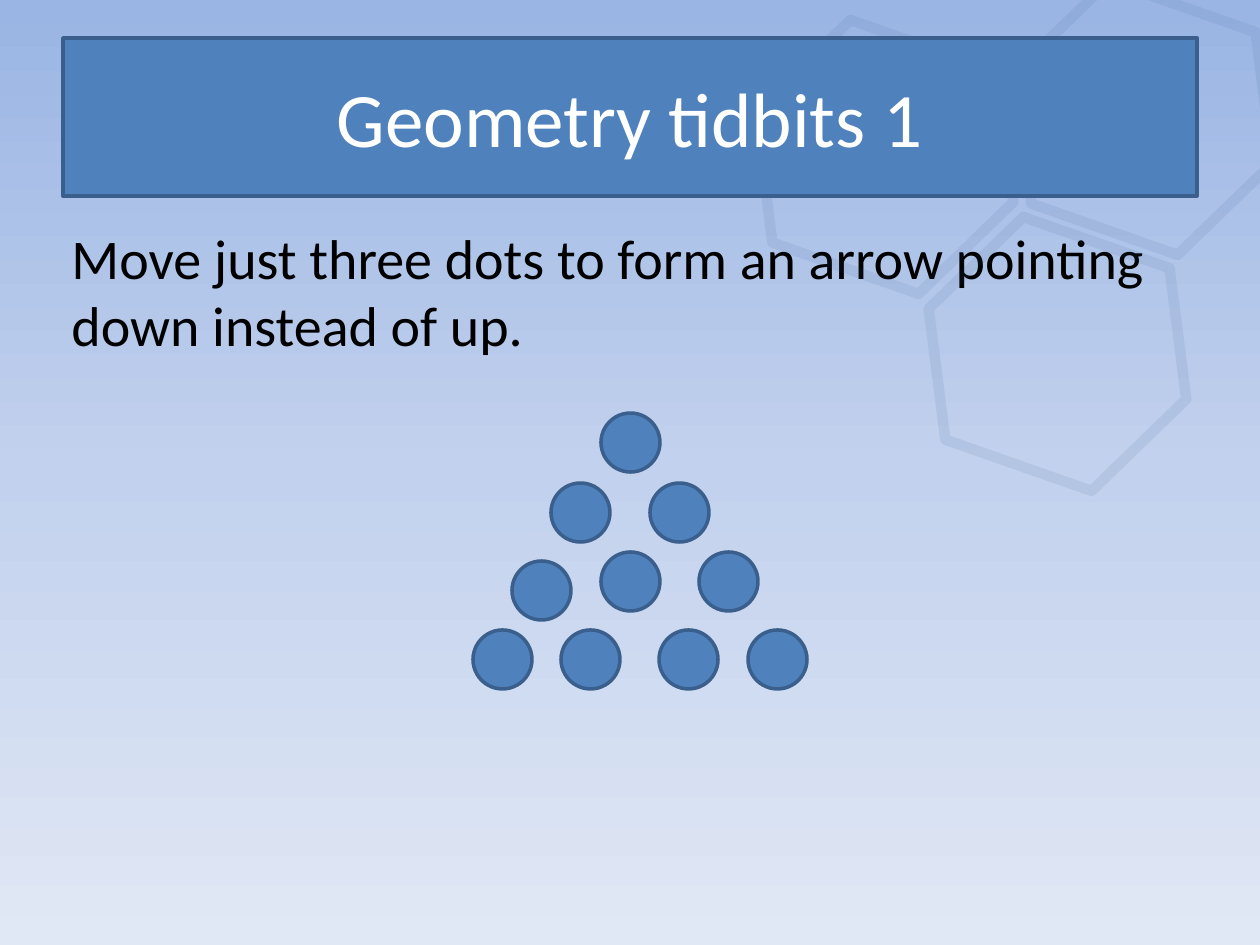
from copy import deepcopy

from lxml import etree
from pptx import Presentation
from pptx.dml.color import RGBColor
from pptx.enum.shapes import MSO_SHAPE
from pptx.enum.text import MSO_ANCHOR, PP_ALIGN
from pptx.oxml.ns import qn
from pptx.util import Pt

RECTANGLE, OVAL, HEXAGON = MSO_SHAPE.RECTANGLE, MSO_SHAPE.OVAL, MSO_SHAPE.HEXAGON
MIDDLE, TOP = MSO_ANCHOR.MIDDLE, MSO_ANCHOR.TOP
CENTER, LEFT = PP_ALIGN.CENTER, PP_ALIGN.LEFT

EMU_PER_INCH = 914400
PX_PER_INCH = 126
COLORS = {"blue": "4F81BD", "outline": "3A5F8C", "white": "FFFFFF", "black": "000000"}
SKY = [(0, "9AB5E4"), (0.5, "C2D1ED"), (1, "E1E8F5")]
HEXAGON_CORNERS = [(748, 39), (921, 236), (1007, 0)]
DOT_SIZE = 59
DOT_ROWS = [
    [(601, 413)],
    [(551, 483), (650, 483)],
    [(512, 561), (601, 552), (699, 552)],
    [(473, 630), (561, 630), (659, 630), (748, 630)],
]


def px(length):
    return round(length * EMU_PER_INCH / PX_PER_INCH)


def rgb(name):
    return RGBColor.from_string(COLORS[name])


def apply(target, values):
    for attribute, value in values.items():
        setattr(target, attribute, value)


def paint_background(slide):
    fill = slide.background.fill
    fill.gradient()
    fill.gradient_angle = 270
    stop_list = slide.element.find(".//" + qn("a:gsLst"))
    stop_list.append(deepcopy(stop_list[0]))
    for stop, (position, color) in zip(fill.gradient_stops, SKY):
        stop.position = position
        stop.color.rgb = RGBColor.from_string(color)


def add_outlined(slide, kind, box, line_width):
    shape = slide.shapes.add_shape(kind, *map(px, box))
    shape.shadow.inherit = False
    shape.line.color.rgb = rgb("outline")
    shape.line.width = Pt(line_width)
    return shape


def add_filled(slide, kind, box):
    shape = add_outlined(slide, kind, box, 2)
    shape.fill.solid()
    shape.fill.fore_color.rgb = rgb("blue")
    return shape


def add_faint_hexagon(slide, left, top):
    hexagon = add_outlined(slide, HEXAGON, (left, top, 273, 236), 6)
    hexagon.rotation = 19.3
    hexagon.fill.background()
    line_color = hexagon.line._ln.find(".//" + qn("a:srgbClr"))
    etree.SubElement(line_color, qn("a:alpha"), val="10000")


def write(shape, text, size, color, align, anchor):
    apply(shape.text_frame, {"word_wrap": True, "vertical_anchor": anchor})
    paragraph = shape.text_frame.paragraphs[0]
    paragraph.alignment = align
    run = paragraph.add_run()
    run.text = text
    apply(run.font, {"name": "Calibri", "size": Pt(size)})
    run.font.color.rgb = rgb(color)


def main():
    presentation = Presentation()
    apply(presentation, {"slide_width": px(1260), "slide_height": px(945)})
    slide = presentation.slides.add_slide(presentation.slide_layouts[6])
    paint_background(slide)

    puzzle = slide.shapes.add_textbox(*map(px, (59, 217, 1138, 624)))
    write(puzzle, "Move just three dots to form an arrow pointing down instead of up.",
          32, "black", LEFT, TOP)

    for left, top in HEXAGON_CORNERS:
        add_faint_hexagon(slide, left, top)

    title = add_filled(slide, RECTANGLE, (63, 38, 1134, 158))
    write(title, "Geometry tidbits 1", 44, "white", CENTER, MIDDLE)

    for row in DOT_ROWS:
        for left, top in row:
            add_filled(slide, OVAL, (left, top, DOT_SIZE, DOT_SIZE))

    presentation.save("out.pptx")


if __name__ == "__main__":
    main()
